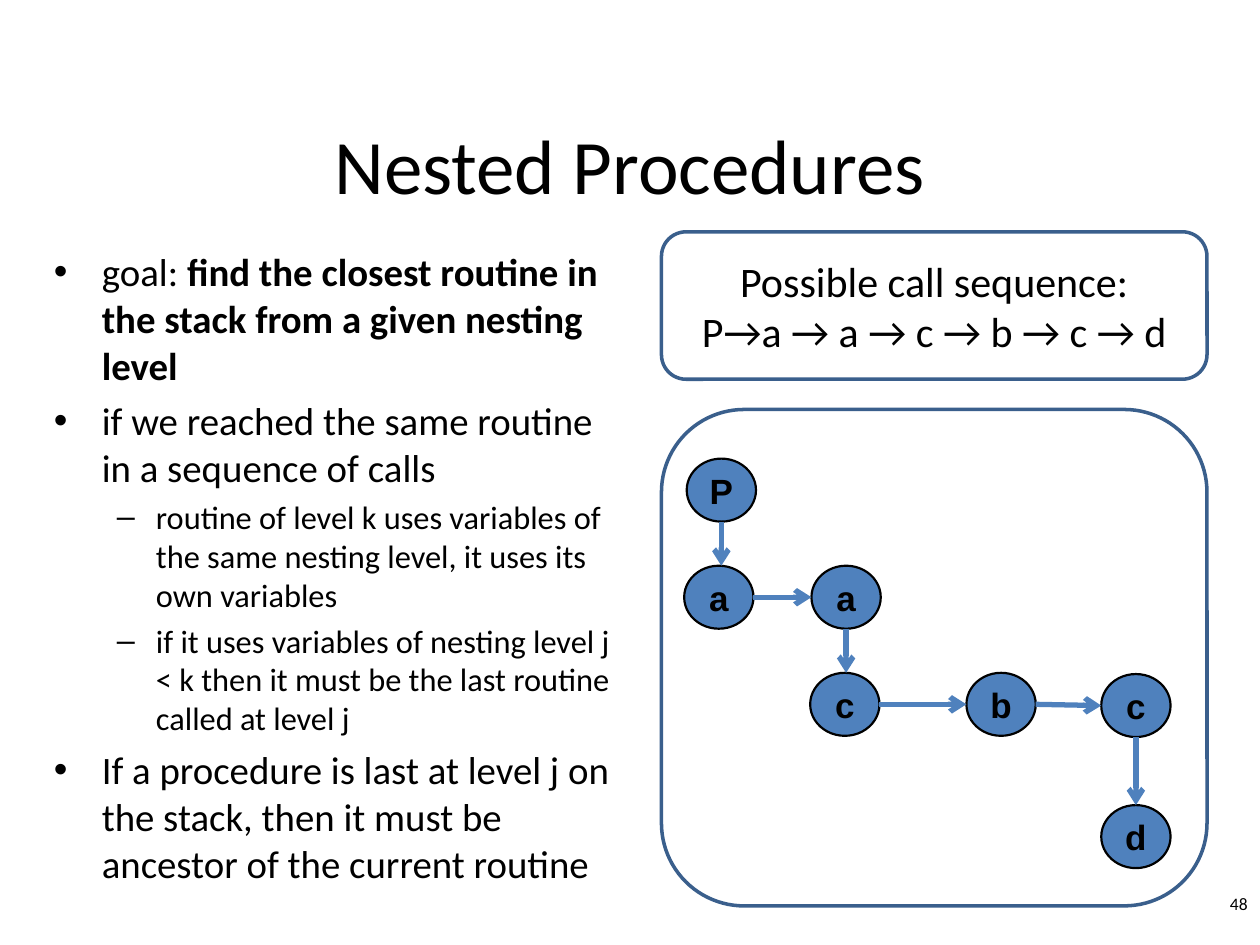
from dataclasses import dataclass

from lxml.etree import SubElement
from pptx import Presentation
from pptx.dml.color import RGBColor
from pptx.enum.shapes import MSO_CONNECTOR as Connector, MSO_SHAPE as Shape
from pptx.enum.text import MSO_ANCHOR as Anchor, PP_ALIGN as Align
from pptx.oxml.ns import qn
from pptx.util import Inches, Pt


@dataclass(frozen=True)
class Theme:
    ink: str = "000000"
    accent: str = "4F81BD"
    frame: str = "3A5F8C"
    body_font: str = "Calibri"
    node_font: str = "Arial"
    title: float = 44
    callout: float = 24
    levels: tuple = (22.2, 18.5)
    node: float = 20
    number: float = 10
    gaps: tuple = (5, 4)
    indents: tuple = ((0.38, 0.38), (0.81, 0.31))
    bullets: tuple = ("•", "–")


class SlideBuilder:
    """Places styled elements on a page whose grid has 100 columns and 75 rows."""

    def __init__(self, deck, theme):
        self.theme = theme
        self.page = deck.slides.add_slide(deck.slide_layouts[6])
        self.column = deck.slide_width / 100
        self.row = deck.slide_height / 75

    def place(self, left, top, width, height):
        return (round(left * self.column), round(top * self.row),
                round(width * self.column), round(height * self.row))

    def style(self, para, size, align=Align.LEFT, font=None, bold=False):
        para.alignment = align
        para.font.name = font or self.theme.body_font
        para.font.size = Pt(size)
        para.font.bold = bold
        para.font.color.rgb = RGBColor.from_string(self.theme.ink)

    def label(self, shape, lines, size, anchor=Anchor.MIDDLE, align=Align.CENTER, **look):
        frame = shape.text_frame
        frame.word_wrap = True
        frame.vertical_anchor = anchor
        frame.text = "\n".join(lines)
        for para in frame.paragraphs:
            self.style(para, size, align, **look)

    def text(self, area, line, size, **look):
        self.label(self.page.shapes.add_textbox(*self.place(*area)), [line], size, **look)

    def bullets(self, area, items):
        frame = self.page.shapes.add_textbox(*self.place(*area)).text_frame
        frame.word_wrap = True
        for index, (level, *spans) in enumerate(items):
            para = frame.add_paragraph() if index else frame.paragraphs[0]
            para.level = level
            self.style(para, self.theme.levels[level])
            para.space_before = Pt(self.theme.gaps[level])
            margin, hanging = self.theme.indents[level]
            props = para._p.get_or_add_pPr()
            props.set("marL", str(Inches(margin)))
            props.set("indent", str(-Inches(hanging)))
            SubElement(props, qn("a:buFont"), typeface="Arial")
            SubElement(props, qn("a:buChar"), char=self.theme.bullets[level])
            props.append(props.find(qn("a:defRPr")))
            for position, words in enumerate(spans):
                span = para.add_run()
                span.text = words
                if position:
                    span.font.bold = True

    def outline(self, kind, area, color, weight):
        shape = self.page.shapes.add_shape(kind, *self.place(*area))
        shape.shadow.inherit = False
        shape.fill.background()
        shape.line.color.rgb = RGBColor.from_string(color)
        shape.line.width = Pt(weight)
        return shape

    def panel(self, area, lines=()):
        shape = self.outline(Shape.ROUNDED_RECTANGLE, area, self.theme.frame, 2)
        if lines:
            self.label(shape, lines, self.theme.callout)

    def node(self, left, top, name):
        shape = self.outline(Shape.OVAL, (left, top, 5.5, 5), self.theme.ink, 1.25)
        shape.fill.solid()
        shape.fill.fore_color.rgb = RGBColor.from_string(self.theme.accent)
        self.label(shape, [name], self.theme.node, font=self.theme.node_font, bold=True)
        shape.text_frame.word_wrap = False
        return shape

    def arrow(self, start, end):
        if end.left >= start.left + start.width:
            points = (start.left + start.width, start.top + start.height // 2,
                      end.left, end.top + end.height // 2)
        else:
            middle = start.left + start.width // 2
            points = (middle, start.top + start.height, middle, end.top)
        line = self.page.shapes.add_connector(Connector.STRAIGHT, *points)
        line.line.color.rgb = RGBColor.from_string(self.theme.accent)
        line.line.width = Pt(3)
        SubElement(line.line._get_or_add_ln(), qn("a:tailEnd"), type="arrow")
        SubElement(line._element.spPr, qn("a:effectLst"))

    def call_chain(self, calls):
        nodes = [self.node(*call) for call in calls]
        for start, end in zip(nodes, nodes[1:]):
            self.arrow(start, end)


def main():
    deck = Presentation()
    deck.slide_width, deck.slide_height = Inches(10), Inches(7.5)
    theme = Theme()
    slide = SlideBuilder(deck, theme)
    slide.text((7.5, 6.7, 85, 12.5), "Nested Procedures", theme.title)
    slide.bullets((3.3, 19.2, 46.7, 50.8), [
        (0, "goal: ", "find the closest routine in the stack from a given nesting level"),
        (0, "if we reached the same routine in a sequence of calls"),
        (1, "routine of level k uses variables of the same nesting level, "
            "it uses its own variables"),
        (1, "if it uses variables of nesting level j < k then it must be "
            "the last routine called at level j"),
        (0, "If a procedure is last at level j on the stack, then it must be "
            "ancestor of the current routine"),
    ])
    slide.text((79.2, 70.4, 20.8, 3), "48", theme.number, anchor=Anchor.TOP, align=Align.RIGHT)
    slide.panel((52.5, 32.5, 43.3, 39.4))
    slide.panel((52.5, 18.4, 43.3, 11.7),
                ["Possible call sequence:", "P→a → a → c → b → c → d"])
    slide.call_chain([
        (54.5, 36.4, "P"),
        (54.3, 44.9, "a"),
        (64.4, 44.9, "a"),
        (64.3, 53.4, "c"),
        (76.7, 53.4, "b"),
        (87.4, 53.5, "c"),
        (87.4, 63.9, "d"),
    ])
    deck.save("out.pptx")


if __name__ == "__main__":
    main()
